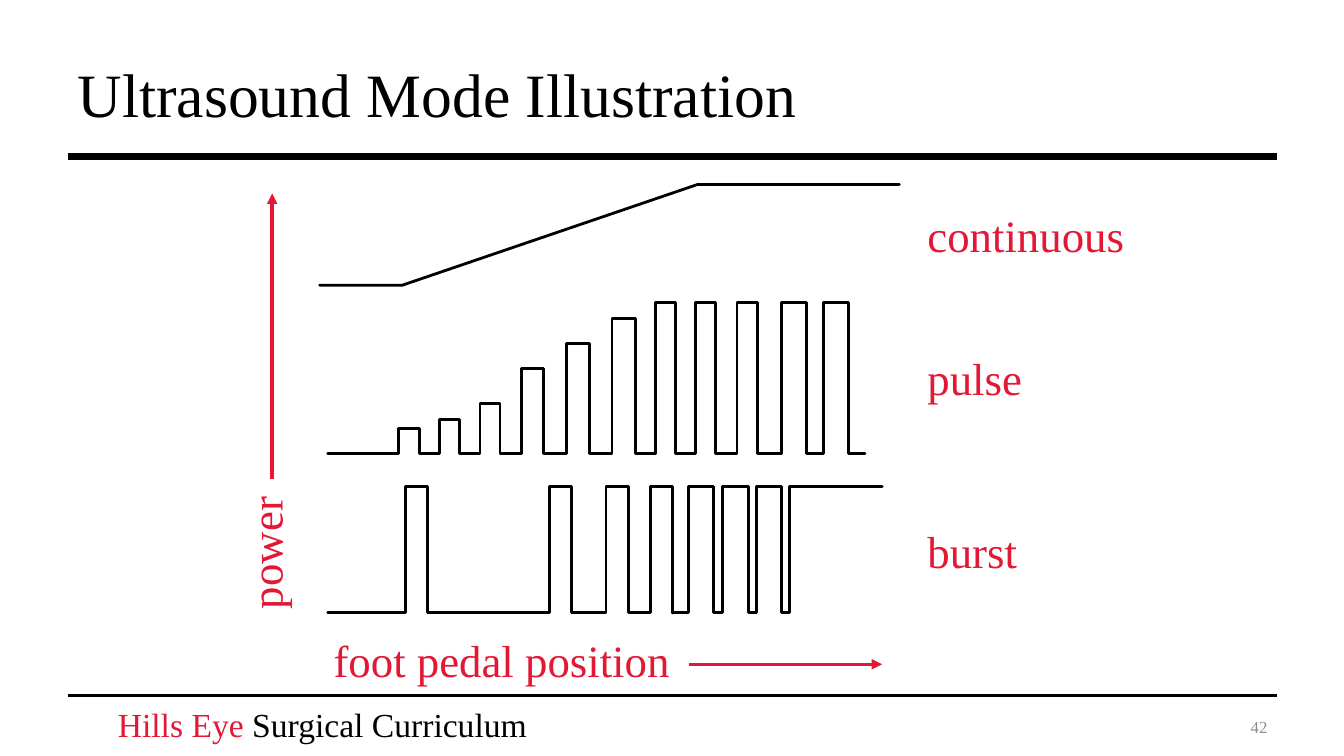
"""Build the slide that illustrates ultrasound power modes."""
from dataclasses import dataclass

from lxml.etree import SubElement
from pptx import Presentation
from pptx.dml.color import RGBColor
from pptx.enum.shapes import MSO_CONNECTOR
from pptx.enum.text import MSO_ANCHOR as ANCHOR, MSO_AUTO_SIZE, PP_ALIGN as ALIGN
from pptx.oxml.ns import qn
from pptx.util import Pt

PX = 9144
FONT = "Times New Roman"
COLORS = {"ink": "000000", "red": "E21835", "gray": "8C8C8C"}
Point = tuple[int, int]


@dataclass
class Label:
    runs: list[tuple[str, str]]
    left: int
    top: int
    width: int
    height: int
    size: int = 32
    anchor: ANCHOR = ANCHOR.TOP
    align: ALIGN = ALIGN.LEFT
    rotation: int = 0


@dataclass
class Line:
    start: Point
    end: Point
    color: str
    weight: float
    arrow: bool = False


@dataclass
class Pulse:
    left: int
    right: int
    top: int


def rgb(name: str) -> RGBColor:
    return RGBColor.from_string(COLORS[name])


def fill_text(tf, label: Label) -> None:
    tf.word_wrap = True
    tf.auto_size = MSO_AUTO_SIZE.NONE
    tf.vertical_anchor = label.anchor
    p = tf.paragraphs[0]
    p.alignment = label.align
    p.font.name = FONT
    p.font.size = Pt(label.size)
    for text, color in label.runs:
        r = p.add_run()
        r.text = text
        r.font.color.rgb = rgb(color)


def place(sp, label: Label) -> None:
    sp.left, sp.top = label.left * PX, label.top * PX
    sp.width, sp.height = label.width * PX, label.height * PX
    sp.rotation = label.rotation
    fill_text(sp.text_frame, label)


def add_line(shapes, line: Line) -> None:
    ends = [v * PX for v in (*line.start, *line.end)]
    cxn = shapes.add_connector(MSO_CONNECTOR.STRAIGHT, *ends)
    cxn.line.color.rgb = rgb(line.color)
    cxn.line.width = Pt(line.weight)
    sp_pr = cxn._element.spPr
    if line.arrow:
        SubElement(sp_pr.find(qn("a:ln")), qn("a:tailEnd"), type="triangle")
    SubElement(sp_pr, qn("a:effectLst"))


def train(start: int, base: int, pulses: list[Pulse], end: int) -> list[Point]:
    points = [(start, base)]
    for pulse in pulses:
        points += [(pulse.left, base), (pulse.left, pulse.top),
                   (pulse.right, pulse.top), (pulse.right, base)]
    return points + [(end, base)]


def add_trace(shapes, points: list[Point]) -> None:
    builder = shapes.build_freeform(*points[0], scale=PX)
    builder.add_line_segments(points[1:], close=False)
    sp = builder.convert_to_shape()
    sp.shadow.inherit = False
    sp.fill.background()
    sp.line.color.rgb = rgb("ink")
    sp.line.width = Pt(2)
    ln = sp._element.spPr.find(qn("a:ln"))
    ln.set("cap", "rnd")
    SubElement(ln, qn("a:round"))


PULSE_BASE, PULSE_TOP = 450, 300
BURST_BASE, BURST_TOP = 608, 483

TITLE = Label([("Ultrasound Mode Illustration", "ink")], 67, 30, 1200, 125, 44,
              ANCHOR.MIDDLE)
LINES = [
    Line((67, 155), (1267, 155), "ink", 5),
    Line((67, 690), (1267, 690), "ink", 2),
    Line((270, 475), (270, 192), "red", 2.5, True),
    Line((683, 659), (875, 659), "red", 2.5, True),
]
LABELS = [
    Label([("Hills Eye", "red"), (" Surgical Curriculum", "ink")],
          107, 693, 440, 50, 24),
    Label([("42", "gray")], 956, 701, 311, 40, 12, ANCHOR.MIDDLE, ALIGN.RIGHT),
    Label([("continuous", "red")], 910, 208, 238, 50, anchor=ANCHOR.MIDDLE),
    Label([("pulse", "red")], 910, 350, 166, 50, anchor=ANCHOR.MIDDLE),
    Label([("burst", "red")], 910, 521, 166, 50, anchor=ANCHOR.MIDDLE),
    Label([("power", "red")], 177, 510, 158, 50, rotation=270),
    Label([("foot pedal position", "red")], 321, 623, 390, 54),
]
CONTINUOUS = [(317, 283), (399, 283), (692, 183), (892, 183)]
LOW_PULSES = [Pulse(395, 416, 425), Pulse(436, 456, 416), Pulse(476, 496, 400)]
RISING_PULSES = [Pulse(517, 539, 366), Pulse(562, 585, 341), Pulse(607, 630, 316)]
FULL_PULSES = [Pulse(x, x + 20, PULSE_TOP) for x in (650, 690, 731)]
WIDE_PULSES = [Pulse(x, x + 25, PULSE_TOP) for x in (775, 817)]
SPARSE_BURSTS = [Pulse(x, x + 22, BURST_TOP) for x in (402, 545, 601, 645)]
DENSE_BURSTS = [Pulse(x, x + 25, BURST_TOP) for x in (683, 717, 750)]
TRACES = [
    CONTINUOUS,
    train(325, PULSE_BASE, LOW_PULSES, 517),
    train(517, PULSE_BASE, RISING_PULSES, 650),
    train(650, PULSE_BASE, FULL_PULSES, 775),
    train(775, PULSE_BASE, WIDE_PULSES, 858),
    train(325, BURST_BASE, SPARSE_BURSTS, 667),
    train(667, BURST_BASE, DENSE_BURSTS, 783) + [(783, BURST_TOP), (875, BURST_TOP)],
]


def main() -> None:
    prs = Presentation()
    prs.slide_width, prs.slide_height = 1333 * PX, 750 * PX
    slide = prs.slides.add_slide(prs.slide_layouts[5])
    shapes = slide.shapes
    place(shapes.title, TITLE)
    for line in LINES:
        add_line(shapes, line)
    for points in TRACES:
        add_trace(shapes, points)
    for label in LABELS:
        place(shapes.add_textbox(0, 0, 0, 0), label)
    prs.save("out.pptx")


if __name__ == "__main__":
    main()
